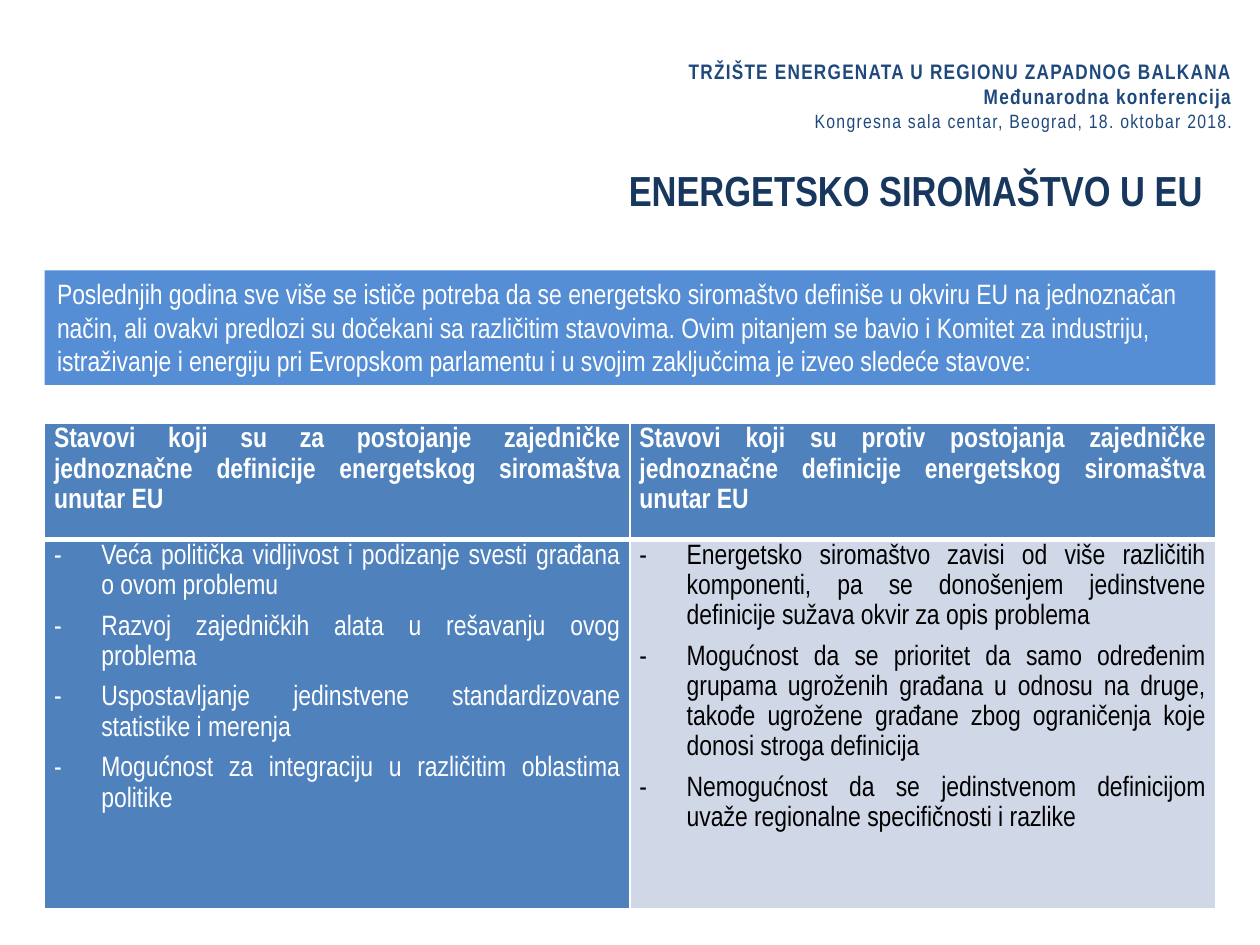
from lxml.etree import SubElement
from pptx import Presentation
from pptx.dml.color import RGBColor
from pptx.enum.shapes import MSO_SHAPE
from pptx.enum.text import MSO_ANCHOR, PP_ALIGN
from pptx.oxml.ns import qn
from pptx.util import Pt

FONT = "Arial Narrow"
COLORS = {"conference": "1F497D", "title": "17375E", "intro": "558ED5",
          "blue": "4F81BD", "pale": "D0D8E8", "white": "FFFFFF", "black": "000000"}

CONFERENCE = [
    ("TRŽIŠTE ENERGENATA U REGIONU ZAPADNOG BALKANA", 12, True),
    ("Međunarodna konferencija", 12, True),
    ("Kongresna sala centar, Beograd, 18. oktobar 2018.", 11, False),
]
TITLE = "ENERGETSKO SIROMAŠTVO U EU"
INTRO = ("Poslednjih godina sve više se ističe potreba da se energetsko siromaštvo definiše "
         "u okviru EU na jednoznačan način, ali ovakvi predlozi su dočekani sa različitim "
         "stavovima. Ovim pitanjem se bavio i Komitet za industriju, istraživanje i energiju "
         "pri Evropskom parlamentu i u svojim zaključcima je izveo sledeće stavove:")
POSITIONS = [
    {"heading": "Stavovi koji su za postojanje zajedničke jednoznačne definicije "
                "energetskog siromaštva unutar EU",
     "points": ["Veća politička vidljivost i podizanje svesti građana o ovom problemu",
                "Razvoj zajedničkih alata u rešavanju ovog problema",
                "Uspostavljanje jedinstvene standardizovane statistike i merenja",
                "Mogućnost za integraciju u različitim oblastima politike"],
     "fill": "blue", "color": "white"},
    {"heading": "Stavovi koji su protiv postojanja zajedničke jednoznačne definicije "
                "energetskog siromaštva unutar EU",
     "points": ["Energetsko siromaštvo zavisi od više različitih komponenti, pa se donošenjem "
                "jedinstvene definicije sužava okvir za opis problema",
                "Mogućnost da se prioritet da samo određenim grupama ugroženih građana u odnosu "
                "na druge, takođe ugrožene građane zbog ograničenja koje donosi stroga definicija",
                "Nemogućnost da se jedinstvenom definicijom uvaže regionalne specifičnosti i razlike"],
     "fill": "pale", "color": "black"},
]
LEFT, WIDTH = 25.5, 669
ROW_HEIGHTS = [66.5, 211]
INDENT = 27


def rgb(name):
    return RGBColor.from_string(COLORS[name])


def add_run(paragraph, text, size, color, bold=False):
    run = paragraph.add_run()
    run.text = text
    run.font.name = FONT
    run.font.size = Pt(size)
    run.font.bold = bold
    run.font.color.rgb = rgb(color)
    return run


def add_dash(paragraph):
    properties = paragraph._p.get_or_add_pPr()
    properties.set("marL", str(Pt(INDENT)))
    properties.set("indent", str(-Pt(INDENT)))
    SubElement(properties, qn("a:buFont"), typeface=FONT)
    SubElement(properties, qn("a:buChar"), char="-")


def set_borders(cell, widths):
    """Draw white cell borders; widths maps each side to points."""
    properties = cell._tc.get_or_add_tcPr()
    for index, (side, width) in enumerate(widths.items()):
        line = properties.makeelement(qn(f"a:ln{side}"), {"w": str(Pt(width))})
        properties.insert(index, line)
        fill = SubElement(line, qn("a:solidFill"))
        SubElement(fill, qn("a:srgbClr"), val=COLORS["white"])


def fill_cell(cell, texts, fill, color, heading):
    cell.fill.solid()
    cell.fill.fore_color.rgb = rgb(fill)
    cell.margin_left = cell.margin_right = Pt(5.4)
    cell.margin_top = cell.margin_bottom = 0
    for index, text in enumerate(texts):
        frame = cell.text_frame
        paragraph = frame.add_paragraph() if index else frame.paragraphs[0]
        paragraph.alignment = PP_ALIGN.JUSTIFY
        paragraph.line_spacing = 1.15
        if index:
            paragraph.space_before = Pt(6)
        if heading:
            paragraph.space_after = Pt(6)
        else:
            add_dash(paragraph)
        add_run(paragraph, text, 16, color, heading)
    set_borders(cell, {"L": 1, "R": 1, "T": 1 if heading else 3, "B": 3 if heading else 1})


def add_conference(slide):
    frame = slide.shapes.add_textbox(Pt(343), Pt(26), Pt(368.5), Pt(57)).text_frame
    frame.word_wrap = True
    frame.vertical_anchor = MSO_ANCHOR.MIDDLE
    paragraph = frame.paragraphs[0]
    paragraph.alignment = PP_ALIGN.RIGHT
    for index, (text, size, bold) in enumerate(CONFERENCE):
        if index:
            paragraph.add_line_break()
        run = add_run(paragraph, text, size, "conference", bold)
        run.font._element.set("spc", "70")


def add_title(slide):
    title = slide.shapes.title
    title.left, title.top, title.width, title.height = Pt(LEFT), Pt(88.5), Pt(WIDTH), Pt(40)
    title.text_frame.vertical_anchor = MSO_ANCHOR.MIDDLE
    paragraph = title.text_frame.paragraphs[0]
    paragraph.alignment = PP_ALIGN.RIGHT
    add_run(paragraph, TITLE, 24, "title", True)


def add_table(slide):
    table = slide.shapes.add_table(2, len(POSITIONS), Pt(LEFT), Pt(242),
                                   Pt(WIDTH), Pt(sum(ROW_HEIGHTS))).table
    for row, height in zip(table.rows, ROW_HEIGHTS):
        row.height = Pt(height)
    for column, position in enumerate(POSITIONS):
        table.columns[column].width = Pt(WIDTH / len(POSITIONS))
        fill_cell(table.cell(0, column), [position["heading"]], "blue", "white", True)
        fill_cell(table.cell(1, column), position["points"], position["fill"],
                  position["color"], False)


def add_intro(slide):
    shape = slide.shapes.add_shape(MSO_SHAPE.RECTANGLE, Pt(LEFT), Pt(154.5), Pt(WIDTH), Pt(65.5))
    shape.shadow.inherit = False
    shape.fill.solid()
    shape.fill.fore_color.rgb = rgb("intro")
    shape.line.fill.background()
    shape.text_frame.word_wrap = True
    shape.text_frame.vertical_anchor = MSO_ANCHOR.TOP
    paragraph = shape.text_frame.paragraphs[0]
    paragraph.alignment = PP_ALIGN.LEFT
    add_run(paragraph, INTRO, 16, "white")


def main():
    presentation = Presentation()
    presentation.slide_width, presentation.slide_height = Pt(720), Pt(540)
    slide = presentation.slides.add_slide(presentation.slide_layouts[5])
    add_conference(slide)
    add_title(slide)
    add_table(slide)
    add_intro(slide)
    presentation.save("out.pptx")


if __name__ == "__main__":
    main()
